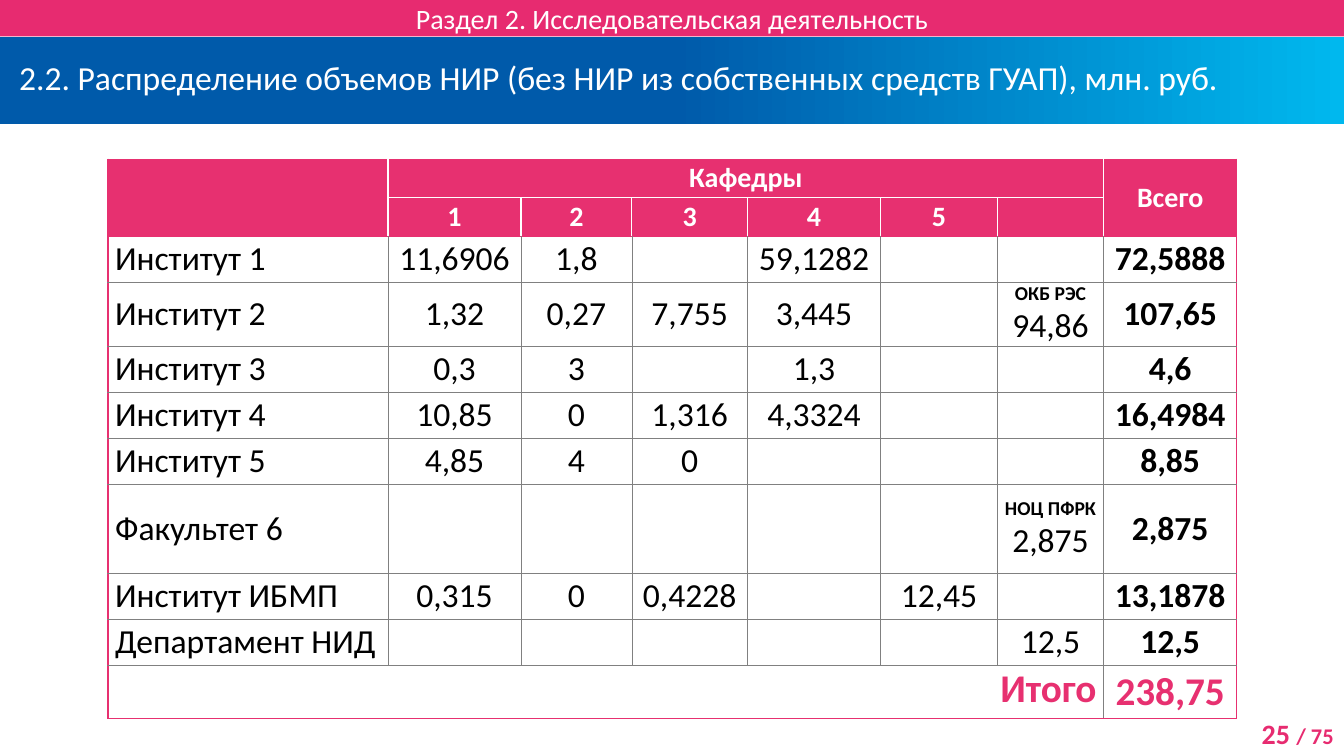
from pptx import Presentation
from pptx.dml.color import RGBColor
from pptx.enum.shapes import MSO_SHAPE
from pptx.enum.text import MSO_ANCHOR, MSO_AUTO_SIZE, PP_ALIGN
from pptx.oxml.ns import qn
from pptx.util import Cm, Pt
from lxml.etree import SubElement

PINK = RGBColor(0xE7, 0x2B, 0x70)
ROSE = RGBColor(0xE7, 0x30, 0x70)
BLUE = RGBColor(0x00, 0x5A, 0xAA)
CYAN = RGBColor(0x00, 0xB8, 0xEE)
WHITE = RGBColor(0xFF, 0xFF, 0xFF)
BLACK = RGBColor(0x00, 0x00, 0x00)
GREY = RGBColor(0x80, 0x80, 0x80)

WIDE = 33.87
COLS = [7.06, 3.35, 2.79, 2.92, 3.35, 2.95, 2.67, 3.36]
ROWS = [0.97, 0.97, 1.16, 1.62, 1.16, 1.16, 1.16, 2.24, 1.16, 1.16, 1.34]
DATA = [
    ["", "Кафедры", "", "", "", "", "", "Всего"],
    ["", "1", "2", "3", "4", "5", "", ""],
    ["Институт 1", "11,6906", "1,8", "", "59,1282", "", "", "72,5888"],
    ["Институт 2", "1,32", "0,27", "7,755", "3,445", "", "ОКБ РЭС\n94,86", "107,65"],
    ["Институт 3", "0,3", "3", "", "1,3", "", "", "4,6"],
    ["Институт 4", "10,85", "0", "1,316", "4,3324", "", "", "16,4984"],
    ["Институт 5", "4,85", "4", "0", "", "", "", "8,85"],
    ["Факультет 6", "", "", "", "", "", "НОЦ ПФРК\n2,875", "2,875"],
    ["Институт ИБМП", "0,315", "0", "0,4228", "", "12,45", "", "13,1878"],
    ["Департамент НИД", "", "", "", "", "", "12,5", "12,5"],
    ["Итого", "", "", "", "", "", "", "238,75"],
]
SPANS = [(0, 0, 1, 0), (0, 1, 0, 6), (0, 7, 1, 7), (10, 0, 10, 6)]
HEAD = 2
LAST = len(ROWS) - 1
END = len(COLS) - 1


def apply(item, form):
    for name, value in form.items():
        setattr(item, name, value)


def write(para, text, size, color, bold=False):
    run = para.add_run()
    run.text = text
    apply(run.font, {"name": "Calibri", "size": Pt(size), "bold": bold})
    run.font.color.rgb = color


def pad(frame, side, top=0):
    apply(frame, {"margin_left": Cm(side), "margin_right": Cm(side),
                  "margin_top": Cm(top), "margin_bottom": Cm(top)})


# Page number in the lower right corner
def add_page(slide, left, top, width, height):
    box = slide.shapes.add_textbox(Cm(left), Cm(top), Cm(width), Cm(height))
    box.text_frame.word_wrap = True
    pad(box.text_frame, 0.25, 0.13)
    para = box.text_frame.paragraphs[0]
    para.alignment = PP_ALIGN.RIGHT
    write(para, "25 ", 20, PINK, True)
    write(para, "/ 75", 16, PINK, True)


# Title on a blue gradient
def add_title(slide, left, top, width, height):
    title = slide.shapes.title
    apply(title, {"left": Cm(left), "top": Cm(top),
                  "width": Cm(width), "height": Cm(height)})
    title.fill.gradient()
    title.fill.gradient_angle = 0
    for stop, place, color in zip(title.fill.gradient_stops, (0.5, 1), (BLUE, CYAN)):
        stop.position = place
        stop.color.rgb = color
    frame = title.text_frame
    pad(frame, 0.25)
    apply(frame, {"word_wrap": True, "auto_size": MSO_AUTO_SIZE.NONE,
                  "margin_left": Cm(0.48), "vertical_anchor": MSO_ANCHOR.MIDDLE})
    para = frame.paragraphs[0]
    apply(para, {"alignment": PP_ALIGN.LEFT, "line_spacing": Pt(24)})
    write(para, "2.2. Распределение объемов НИР (без НИР из собственных "
                "средств ГУАП), млн. руб.", 24, WHITE)


# Section bar along the top edge
def add_bar(slide, left, top, width, height):
    bar = slide.shapes.add_shape(MSO_SHAPE.RECTANGLE, Cm(left), Cm(top),
                                 Cm(width), Cm(height))
    bar.shadow.inherit = False
    bar.fill.solid()
    bar.fill.fore_color.rgb = PINK
    bar.line.fill.background()
    pad(bar.text_frame, 0)
    bar.text_frame.vertical_anchor = MSO_ANCHOR.MIDDLE
    para = bar.text_frame.paragraphs[0]
    para.alignment = PP_ALIGN.CENTER
    write(para, "Раздел 2. Исследовательская деятельность", 20, WHITE)


# Cell borders: rose frame, white lines in the head, grey lines in the body
def pick_edges(row, col):
    if row < HEAD:
        side, cross = WHITE, WHITE if 0 < col < END else ROSE
    else:
        side = cross = GREY
    return {
        "a:lnL": ROSE if col == 0 else side,
        "a:lnR": ROSE if col == END else side,
        "a:lnT": ROSE if row in (0, HEAD) else cross,
        "a:lnB": ROSE if row in (HEAD - 1, LAST) else cross,
    }


def add_edges(cell, row, col):
    props = cell._tc.get_or_add_tcPr()
    for tag, color in pick_edges(row, col).items():
        width = Pt(0.25) if color == GREY else Pt(1)
        line = SubElement(props, qn(tag), w=str(int(width)))
        fill = SubElement(line, qn("a:solidFill"))
        SubElement(fill, qn("a:srgbClr"), val=str(color))


def fill_cell(cell, row, col, text):
    pad(cell, 0.18)
    cell.vertical_anchor = MSO_ANCHOR.MIDDLE
    add_edges(cell, row, col)
    size, color, bold = 24, BLACK, col == END
    align = PP_ALIGN.CENTER if col else PP_ALIGN.LEFT
    if row < HEAD:
        size, color, bold = 20, WHITE, True
        cell.fill.solid()
        cell.fill.fore_color.rgb = ROSE
    else:
        cell.fill.background()
    if row == LAST:
        size, color, bold = 28, ROSE, True
        if col == 0:
            align = PP_ALIGN.RIGHT
            cell.vertical_anchor = MSO_ANCHOR.TOP
    if not text:
        return
    *notes, value = text.split("\n")
    para = cell.text_frame.paragraphs[0]
    for note in notes:
        para.alignment = align
        write(para, note, 14, color, True)
        para = cell.text_frame.add_paragraph()
    para.alignment = align
    write(para, value, size, color, bold)


# Table of research volumes
def add_grid(slide, left, top):
    shape = slide.shapes.add_table(len(ROWS), len(COLS), Cm(left), Cm(top),
                                   Cm(sum(COLS)), Cm(sum(ROWS)))
    table = shape.table
    apply(table, {"first_row": False, "horz_banding": False})
    for col, width in zip(table.columns, COLS):
        col.width = Cm(width)
    for row, height in zip(table.rows, ROWS):
        row.height = Cm(height)
    for r, line in enumerate(DATA):
        for c, text in enumerate(line):
            fill_cell(table.cell(r, c), r, c, text)
    for r, c, low, far in SPANS:
        table.cell(r, c).merge(table.cell(low, far))


def main():
    deck = Presentation()
    apply(deck, {"slide_width": Cm(WIDE), "slide_height": Cm(19.05)})
    slide = deck.slides.add_slide(deck.slide_layouts[5])
    add_page(slide, 30.81, 17.93, 3.05, 1.12)
    add_title(slide, 0, 0.92, WIDE, 2.21)
    add_bar(slide, 0, 0, WIDE, 0.92)
    add_grid(slide, 2.72, 4.01)
    deck.save("out.pptx")


if __name__ == "__main__":
    main()
